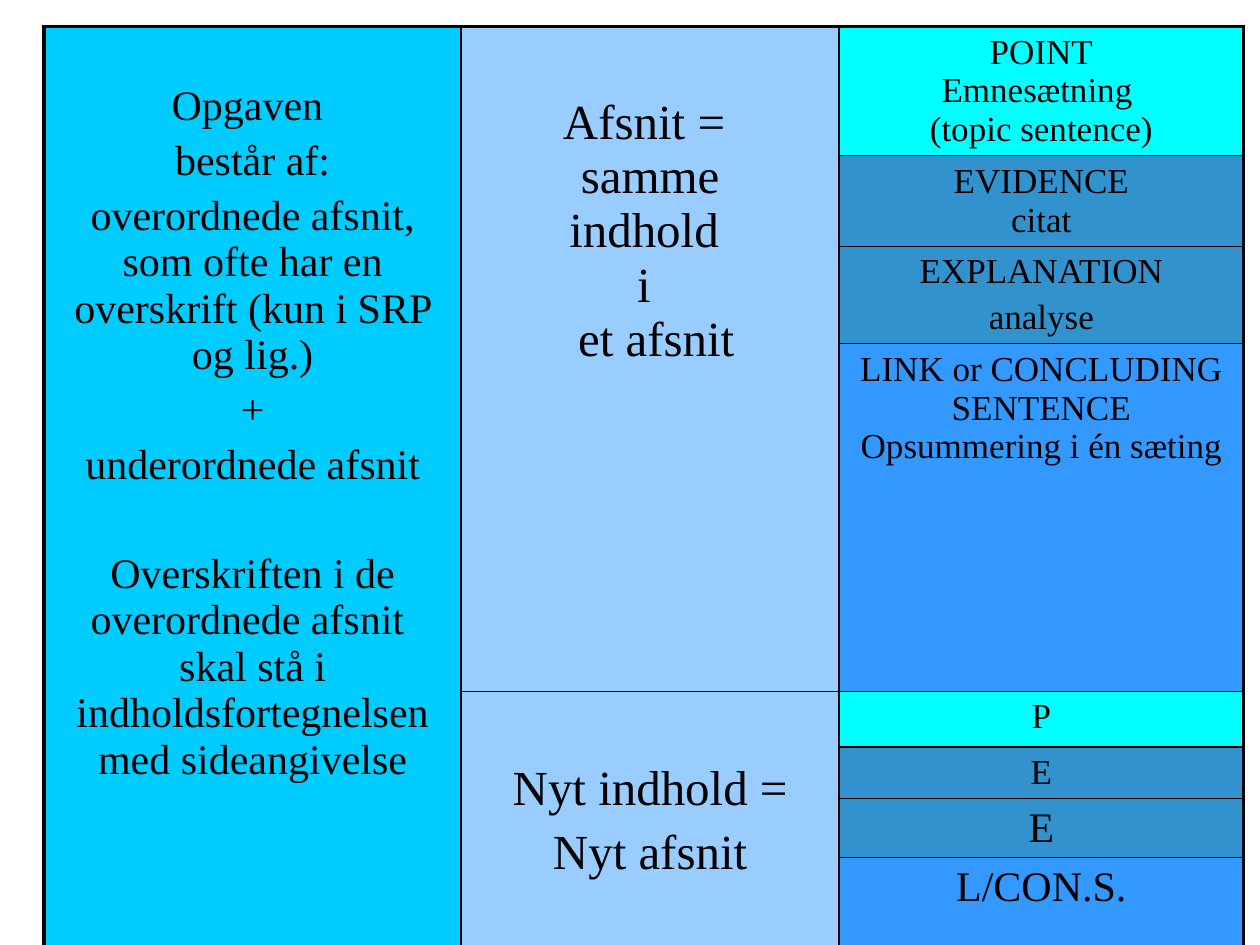
"""Build a slide with a table on how an essay divides into paragraphs."""
from dataclasses import dataclass

from lxml import etree
from pptx import Presentation
from pptx import util as u
from pptx.dml import color
from pptx.enum import text
from pptx.oxml import ns

FONT = "Times New Roman"
INK = "000000"
CYAN, STEEL, BLUE = "00FFFF", "3192CD", "3399FF"
SKY, PALE = "00CCFF", "99CCFF"
COLS = (3.31, 3, 3.21)
ROWS = (1.01, 0.72, 0.77, 2.76, 0.44, 0.41, 0.46, 0.75)


@dataclass(frozen=True)
class Block:
    """A table cell, merged down over span rows."""
    row: int
    col: int
    fill: str
    size: int
    lines: tuple[str, ...]
    span: int = 1
    top: float = 0.05
    gap: float = 0.2
    wide: int = -1


BLOCKS = (
    Block(0, 0, SKY, 24, (
        "Opgaven ",
        "består af:",
        "overordnede afsnit, som ofte har en overskrift (kun i SRP og lig.)",
        "+",
        "underordnede afsnit",
        "Overskriften i de overordnede afsnit  skal stå i "
        "indholdsfortegnelsen med sideangivelse",
    ), span=8, top=0.45, wide=5),
    Block(0, 1, PALE, 28, ("Afsnit = \nsamme\nindhold \ni \n et afsnit",),
          span=4, top=0.55),
    Block(4, 1, PALE, 28, ("Nyt indhold =", "Nyt afsnit"), span=4, top=0.56),
    Block(0, 2, CYAN, 20, ("POINT", "Emnesætning ", "(topic sentence)"), gap=0),
    Block(1, 2, STEEL, 20, ("EVIDENCE", "citat"), gap=0),
    Block(2, 2, STEEL, 20, ("EXPLANATION", "analyse")),
    Block(3, 2, BLUE, 20,
          ("LINK or CONCLUDING SENTENCE", "Opsummering i én sæting"), gap=0),
    Block(4, 2, CYAN, 20, ("P",)),
    Block(5, 2, STEEL, 20, ("E",)),
    Block(6, 2, STEEL, 24, ("E",)),
    Block(7, 2, BLUE, 24, ("L/CON.S.",)),
)


def tint(code: str) -> color.RGBColor:
    """Turn a hex string into a colour."""
    return color.RGBColor.from_string(code)


def edge(cell, sides: dict[str, bool]) -> None:
    """Draw the named sides of a cell, thick where the flag is true."""
    props = cell._tc.get_or_add_tcPr()
    for spot, (side, thick) in enumerate(sides.items()):
        line = etree.Element(ns.qn(f"a:ln{side}"), w=str(u.Pt(2.25 if thick else 1)))
        solid = etree.SubElement(line, ns.qn("a:solidFill"))
        etree.SubElement(solid, ns.qn("a:srgbClr"), val=INK)
        props.insert(spot, line)


def frame(table, block: Block) -> None:
    """Fill and outline every cell that a block covers."""
    last = block.row + block.span - 1
    for row in range(block.row, last + 1):
        cell = table.cell(row, block.col)
        cell.fill.solid()
        cell.fill.fore_color.rgb = tint(block.fill)
        sides = {"L": block.col == 0, "R": block.col == len(COLS) - 1}
        if row == block.row:
            sides["T"] = row == 0
        if row == last:
            sides["B"] = row == len(ROWS) - 1
        edge(cell, sides)


def write(cell, block: Block) -> None:
    """Write the lines of a block as centred paragraphs."""
    cell.margin_top = u.Inches(block.top)
    body = cell.text_frame
    for spot, line in enumerate(block.lines):
        para = body.add_paragraph() if spot else body.paragraphs[0]
        para.alignment = text.PP_ALIGN.CENTER
        if spot:
            para.space_before = u.Pt(36 if spot == block.wide else block.size * block.gap)
        for turn, part in enumerate(line.split("\n")):
            if turn:
                para.add_line_break()
            run = para.add_run()
            run.text = part
            run.font.name = FONT
            run.font.size = u.Pt(block.size)
            run.font.color.rgb = tint(INK)


def main() -> None:
    """Build and save the slide."""
    deck = Presentation()
    deck.slide_width, deck.slide_height = u.Inches(10), u.Inches(7.5)
    slide = deck.slides.add_slide(deck.slide_layouts[6])
    table = slide.shapes.add_table(
        len(ROWS), len(COLS), u.Inches(0.35), u.Inches(0.21),
        u.Inches(sum(COLS)), u.Inches(sum(ROWS))).table
    table.first_row = table.horz_banding = False
    for col, width in zip(table.columns, COLS):
        col.width = u.Inches(width)
    for row, height in zip(table.rows, ROWS):
        row.height = u.Inches(height)
    for block in BLOCKS:
        frame(table, block)
        cell = table.cell(block.row, block.col)
        if block.span > 1:
            cell.merge(table.cell(block.row + block.span - 1, block.col))
        write(cell, block)
    deck.save("out.pptx")


if __name__ == "__main__":
    main()
